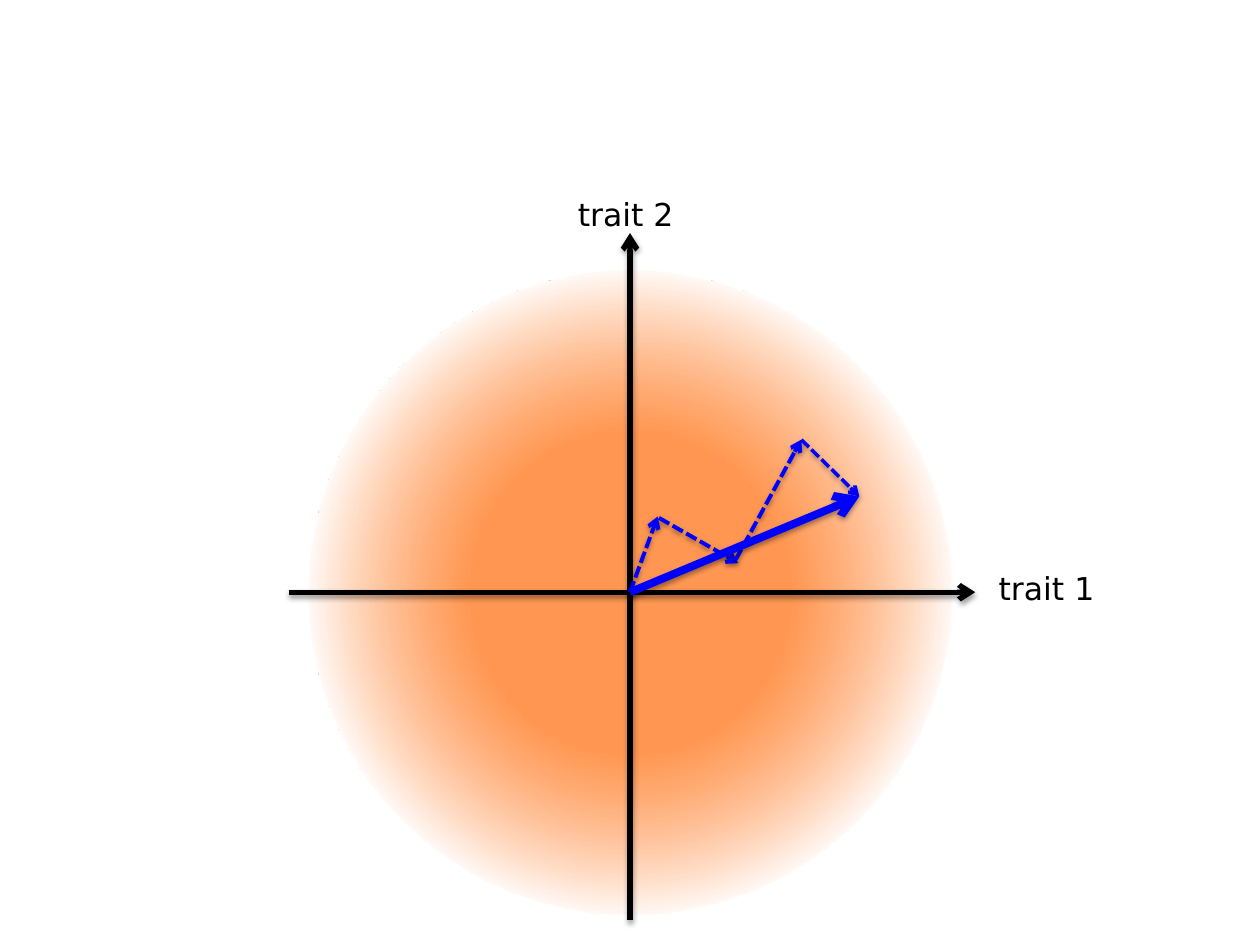
from dataclasses import dataclass

from lxml.etree import SubElement
from pptx import Presentation
from pptx.dml.color import RGBColor
from pptx.enum.dml import MSO_LINE
from pptx.enum.shapes import MSO_CONNECTOR, MSO_SHAPE
from pptx.enum.text import MSO_AUTO_SIZE, PP_ALIGN
from pptx.oxml import parse_xml
from pptx.oxml.ns import nsdecls, qn
from pptx.util import Inches, Length, Pt

COLUMNS, ROWS = 100, 75
BLACK, BLUE, ORANGE, WHITE = "000000", "0000FF", "FF6600", "FFFFFF"
FONT = "DejaVu Sans"

Point = tuple[float, float]


@dataclass(frozen=True)
class Arrow:
    start: Point
    end: Point
    color: str
    width: float
    dashed: bool = False


@dataclass(frozen=True)
class Label:
    text: str
    left: float
    top: float


ORIGIN = (50, 47)
RADIUS = 25.55
TARGET = (68.2, 39.4)
PEAK = (63.6, 34.9)

AXES = [
    Arrow((50, 73), (50, 18.5), BLACK, 3),
    Arrow((22.9, 47), (77.4, 47), BLACK, 3),
]
LABELS = [Label("trait 2 ", 44.8, 15), Label("trait 1 ", 78.2, 44.7)]
STEPS = [
    Arrow(ORIGIN, (52.2, 41), BLUE, 2.25, True),
    Arrow(PEAK, TARGET, BLUE, 2, True),
    Arrow((52.3, 41.1), (58.6, 44.7), BLUE, 2.25, True),
    Arrow((58.4, 44.4), PEAK, BLUE, 2.25, True),
]
RESULT = Arrow(ORIGIN, TARGET, BLUE, 4.5)

deck = Presentation()
deck.slide_width, deck.slide_height = Inches(10), Inches(7.5)
page = deck.slides.add_slide(deck.slide_layouts[6])


def across(columns: float) -> Length:
    return Length(round(deck.slide_width * columns / COLUMNS))


def down(rows: float) -> Length:
    return Length(round(deck.slide_height * rows / ROWS))


def rgb(color: str) -> RGBColor:
    return RGBColor.from_string(color)


def add_shadow(properties) -> None:
    effects = SubElement(properties, qn("a:effectLst"))
    shadow = SubElement(
        effects, qn("a:outerShdw"), blurRad=str(Pt(3.1)), dist=str(Pt(1.6)),
        dir="5400000", rotWithShape="0",
    )
    color = SubElement(shadow, qn("a:srgbClr"), val=BLACK)
    SubElement(color, qn("a:alpha"), val="38000")


def draw_cloud(center: Point, radius: float) -> None:
    cloud = page.shapes.add_shape(
        MSO_SHAPE.OVAL, across(center[0] - radius), down(center[1] - radius),
        across(2 * radius), down(2 * radius),
    )
    cloud.shadow.inherit = False
    cloud.line.fill.background()
    stops = "".join(
        f'<a:gs pos="{place}000"><a:srgbClr val="{color}">'
        f'<a:alpha val="{opacity}000"/></a:srgbClr></a:gs>'
        for place, color, opacity in [(35, ORANGE, 67), (72, WHITE, 91)]
    )
    gradient = parse_xml(
        f'<a:gradFill {nsdecls("a")} rotWithShape="1"><a:gsLst>{stops}</a:gsLst>'
        '<a:path path="circle"><a:fillToRect l="50000" t="50000" r="50000" b="50000"/>'
        "</a:path></a:gradFill>"
    )
    cloud.element.spPr.find(qn("a:prstGeom")).addnext(gradient)


def draw_arrow(arrow: Arrow) -> None:
    connector = page.shapes.add_connector(
        MSO_CONNECTOR.STRAIGHT, across(arrow.start[0]), down(arrow.start[1]),
        across(arrow.end[0]), down(arrow.end[1]),
    )
    connector.line.color.rgb = rgb(arrow.color)
    connector.line.width = Pt(arrow.width)
    if arrow.dashed:
        connector.line.dash_style = MSO_LINE.SQUARE_DOT
    properties = connector.element.spPr
    SubElement(properties.find(qn("a:ln")), qn("a:tailEnd"), type="arrow")
    add_shadow(properties)


def draw_label(label: Label) -> None:
    box = page.shapes.add_textbox(
        across(label.left), down(label.top), across(10.5), down(4)
    )
    frame = box.text_frame
    frame.text = label.text
    frame.word_wrap = False
    frame.auto_size = MSO_AUTO_SIZE.SHAPE_TO_FIT_TEXT
    para = frame.paragraphs[0]
    para.alignment = PP_ALIGN.CENTER
    for span in para.runs:
        span.font.name = FONT
        span.font.size = Pt(18)
        span.font.color.rgb = rgb(BLACK)


draw_cloud(ORIGIN, RADIUS)
for axis in AXES:
    draw_arrow(axis)
for label in LABELS:
    draw_label(label)
for arrow in [*STEPS, RESULT]:
    draw_arrow(arrow)

deck.save("out.pptx")
